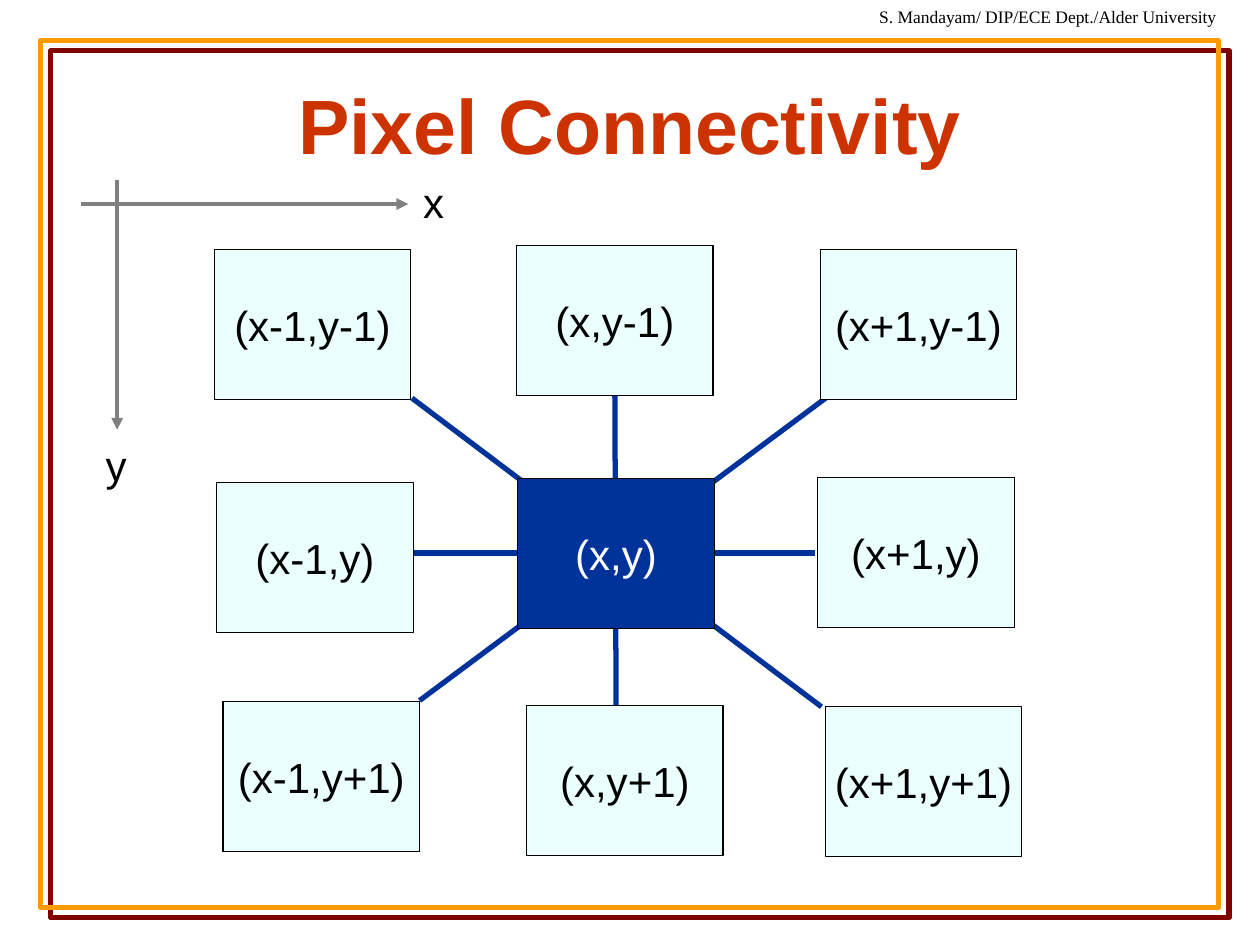
from dataclasses import dataclass

from lxml import etree
from pptx import Presentation
from pptx.dml.color import RGBColor
from pptx.enum.shapes import MSO_CONNECTOR, MSO_SHAPE
from pptx.enum.text import MSO_ANCHOR, MSO_AUTO_SIZE, PP_ALIGN
from pptx.oxml import parse_xml
from pptx.oxml.ns import nsdecls, qn
from pptx.util import Inches, Pt

RECTANGLE = MSO_SHAPE.RECTANGLE
STRAIGHT = MSO_CONNECTOR.STRAIGHT
LEFT, CENTER = PP_ALIGN.LEFT, PP_ALIGN.CENTER
TOP, MIDDLE = MSO_ANCHOR.TOP, MSO_ANCHOR.MIDDLE
FIT_SHAPE = MSO_AUTO_SIZE.SHAPE_TO_FIT_TEXT
TITLE_ONLY = 5
BOTTOM_SITE = 2


@dataclass(frozen=True)
class Theme:
    frame: str = "FF9900"
    frame_shadow: str = "800000"
    title: str = "CC3300"
    link: str = "003399"
    neighbour: str = "EBFFFF"
    axis: str = "808080"
    black: str = "000000"
    white: str = "FFFFFF"
    sans: str = "Arial"
    serif: str = "Times New Roman"
    title_size: int = 44
    label_size: int = 24
    header_size: int = 10


THEME = Theme()
PIXEL_WIDTH, PIXEL_HEIGHT = 1.56, 1.19

# Label, left and top of each pixel, in the order of stacking.
PIXELS = [
    ("(x+1,y-1)", 6.51, 1.98),
    ("(x,y)", 4.11, 3.8),
    ("(x+1,y)", 6.49, 3.79),
    ("(x+1,y+1)", 6.55, 5.61),
    ("(x,y+1)", 4.18, 5.6),
    ("(x-1,y+1)", 1.77, 5.57),
    ("(x-1,y-1)", 1.7, 1.98),
    ("(x,y-1)", 4.1, 1.95),
    ("(x-1,y)", 1.72, 3.83),
]

# Links that run behind the centre pixel: start and end.
LINKS = [
    ((3.27, 3.16), (6.52, 5.61)),
    ((3.33, 5.56), (6.62, 3.11)),
    ((3.28, 4.39), (6.47, 4.39)),
]
VERTICAL_LINK = ((4.88, 3.14), (4.89, 5.62))

# Label, its left and top, then start and end of the arrow.
AXES = [
    ("x", (3.26, 1.35), (0.64, 1.62), (3.24, 1.62)),
    ("y", (0.74, 3.44), (0.93, 1.43), (0.93, 3.41)),
]


def colour(value):
    return RGBColor.from_string(value)


def write(shape, text, *, size=THEME.label_size, font=THEME.sans,
          color=THEME.black, bold=False, align=LEFT, anchor=TOP, wrap=False):
    frame = shape.text_frame
    frame.word_wrap = wrap
    frame.vertical_anchor = anchor
    para = frame.paragraphs[0]
    para.alignment = align
    span = para.add_run()
    span.text = text
    span.font.size = Pt(size)
    span.font.name = font
    span.font.bold = bold
    span.font.color.rgb = colour(color)


def add_label(page, text, left, top, width, height, **text_format):
    box = page.shapes.add_textbox(
        Inches(left), Inches(top), Inches(width), Inches(height))
    write(box, text, **text_format)
    box.text_frame.auto_size = FIT_SHAPE


def add_box(page, left, top, width, height, line, line_width, fill=None):
    box = page.shapes.add_shape(
        RECTANGLE, Inches(left), Inches(top), Inches(width), Inches(height))
    box.shadow.inherit = False
    box.line.color.rgb = colour(line)
    box.line.width = Pt(line_width)
    if fill:
        box.fill.solid()
        box.fill.fore_color.rgb = colour(fill)
    else:
        box.fill.background()
    return box


def add_frame(page):
    """Add the page border with its hard offset shadow."""
    frame = add_box(page, 0.32, 0.32, 9.35, 6.88, THEME.frame, 3)
    effects = frame._element.spPr.find(qn("a:effectLst"))
    effects.append(parse_xml(
        f'<a:outerShdw {nsdecls("a")} dist="{Pt(8.5)}" dir="{45 * 60000}" '
        f'algn="ctr" rotWithShape="0">'
        f'<a:srgbClr val="{THEME.frame_shadow}"/></a:outerShdw>'))


def add_line(page, start, end, color, width, arrow=False):
    line = page.shapes.add_connector(
        STRAIGHT, *(Inches(value) for value in (*start, *end)))
    line.line.color.rgb = colour(color)
    line.line.width = Pt(width)
    if arrow:
        etree.SubElement(line.line._get_or_add_ln(), qn("a:tailEnd"),
                         type="triangle")
    etree.SubElement(line._element.spPr, qn("a:effectLst"))
    return line


def add_title(page, text):
    title = page.shapes.title
    title.left, title.top = Inches(0.75), Inches(0.67)
    title.width, title.height = Inches(8.5), Inches(0.62)
    write(title, text, size=THEME.title_size, color=THEME.title, bold=True,
          align=CENTER, anchor=MIDDLE, wrap=True)
    title.text_frame.auto_size = MSO_AUTO_SIZE.NONE


def add_pixel(page, label, left, top):
    is_centre = label == "(x,y)"
    box = add_box(page, left, top, PIXEL_WIDTH, PIXEL_HEIGHT, THEME.black,
                  0.75, THEME.link if is_centre else THEME.neighbour)
    write(box, label, color=THEME.white if is_centre else THEME.black,
          align=CENTER, anchor=MIDDLE)
    return box


def add_neighbourhood(page):
    """Add the links first, so that the pixels cover them."""
    for start, end in LINKS:
        add_line(page, start, end, THEME.link, 3)
    vertical = add_line(page, *VERTICAL_LINK, THEME.link, 3)
    boxes = {label: add_pixel(page, label, left, top)
             for label, left, top in PIXELS}
    vertical.begin_connect(boxes["(x,y-1)"], BOTTOM_SITE)


def add_axes(page):
    for label, (left, top), start, end in AXES:
        add_line(page, start, end, THEME.axis, 2.25, arrow=True)
        add_label(page, label, left, top, 0.37, 0.5)


def main():
    deck = Presentation()
    deck.slide_width, deck.slide_height = Inches(10), Inches(7.5)
    page = deck.slides.add_slide(deck.slide_layouts[TITLE_ONLY])
    add_frame(page)
    add_label(page, "S. Mandayam/ DIP/ECE Dept./Alder University",
              6.88, 0, 2.97, 0.27, size=THEME.header_size, font=THEME.serif)
    add_title(page, "Pixel Connectivity")
    add_neighbourhood(page)
    add_axes(page)
    deck.save("out.pptx")


if __name__ == "__main__":
    main()
